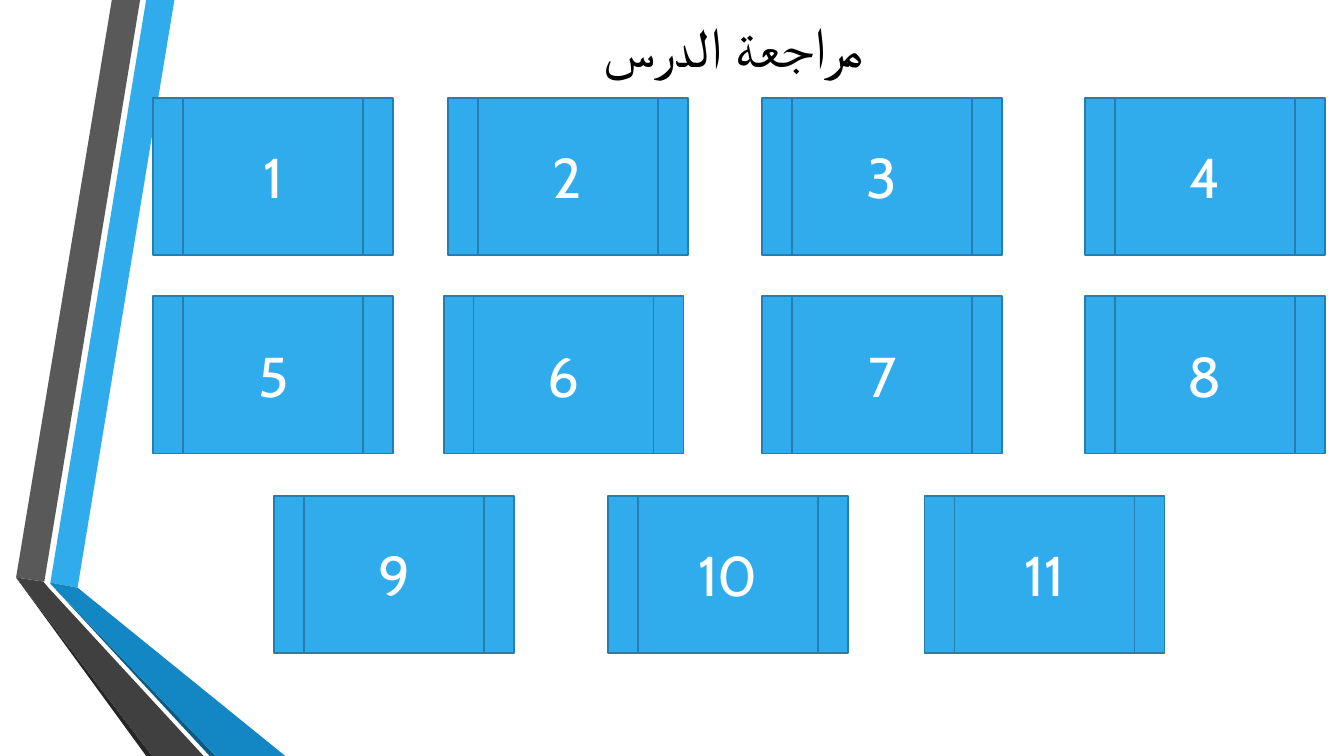
from pptx import Presentation
from pptx.dml.color import RGBColor
from pptx.enum.shapes import MSO_SHAPE
from pptx.enum.text import MSO_ANCHOR, PP_ALIGN
from pptx.util import Inches, Pt

BUTTON = MSO_SHAPE.FLOWCHART_PREDEFINED_PROCESS
MIDDLE = MSO_ANCHOR.MIDDLE
CENTER = PP_ALIGN.CENTER

BLUE = "30ACEC"
BUTTON_WIDTH, BUTTON_HEIGHT = 2.38, 1.56

# Folded ribbon on the left: fill and corner points in inches
RIBBON = [
    (BLUE, [(0.5, 5.78), (0.77, 5.83), (1.73, 0), (1.45, 0)]),
    ("595959", [(1.39, 0), (1.11, 0), (0.16, 5.73), (0.44, 5.77)]),
    ("262626", [(0.16, 5.73), (1.45, 7.5), (1.51, 7.5)]),
    ("0C5A82", [(0.5, 5.79), (2.08, 7.5), (2.14, 7.5)]),
    ("1287C3", [(0.5, 5.79), (2.14, 7.5), (2.83, 7.5), (0.77, 5.83), (0.5, 5.78)]),
    ("404040", [(2.02, 7.5), (0.48, 5.83), (0.43, 5.77), (0.16, 5.73), (1.51, 7.5)]),
]

# Question buttons: top of each row and the left edges in it
BUTTON_ROWS = [
    (0.97, [1.52, 4.44, 7.56, 10.76]),
    (2.94, [1.52, 4.4, 7.56, 10.76]),
    (4.92, [2.72, 6.03, 9.17]),
]


def paint(shape, fill):
    shape.shadow.inherit = False
    shape.fill.solid()
    shape.fill.fore_color.rgb = RGBColor.from_string(fill)


def write(shape, text, color):
    """Put one centred line of large text in the shape."""
    frame = shape.text_frame
    frame.word_wrap = True
    frame.vertical_anchor = MIDDLE
    para = frame.paragraphs[0]
    para.text = text
    para.alignment = CENTER
    para.font.name = "Cabin"
    para.font.size = Pt(40)
    para.font.color.rgb = RGBColor.from_string(color)
    return para


deck = Presentation()
deck.slide_width = Inches(13.33)
deck.slide_height = Inches(7.5)
page = deck.slides.add_slide(deck.slide_layouts[6])

for fill, corners in RIBBON:
    points = [(Inches(x), Inches(y)) for x, y in corners]
    builder = page.shapes.build_freeform(*points[0])
    builder.add_line_segments(points[1:], close=True)
    band = builder.convert_to_shape()
    paint(band, fill)
    band.line.fill.background()

title = page.shapes.add_textbox(Inches(5.06), Inches(0), Inches(4.29), Inches(0.89))
title_para = write(title, "مراجعة الدرس ", "000000")
title_para._p.get_or_add_pPr().set("rtl", "1")

number = 0
for top, lefts in BUTTON_ROWS:
    for left in lefts:
        number += 1
        button = page.shapes.add_shape(
            BUTTON, Inches(left), Inches(top), Inches(BUTTON_WIDTH), Inches(BUTTON_HEIGHT)
        )
        paint(button, BLUE)
        button.line.color.rgb = RGBColor.from_string("247FAF")
        button.line.width = Pt(1.25)
        write(button, str(number), "FFFFFF")

deck.save("out.pptx")
